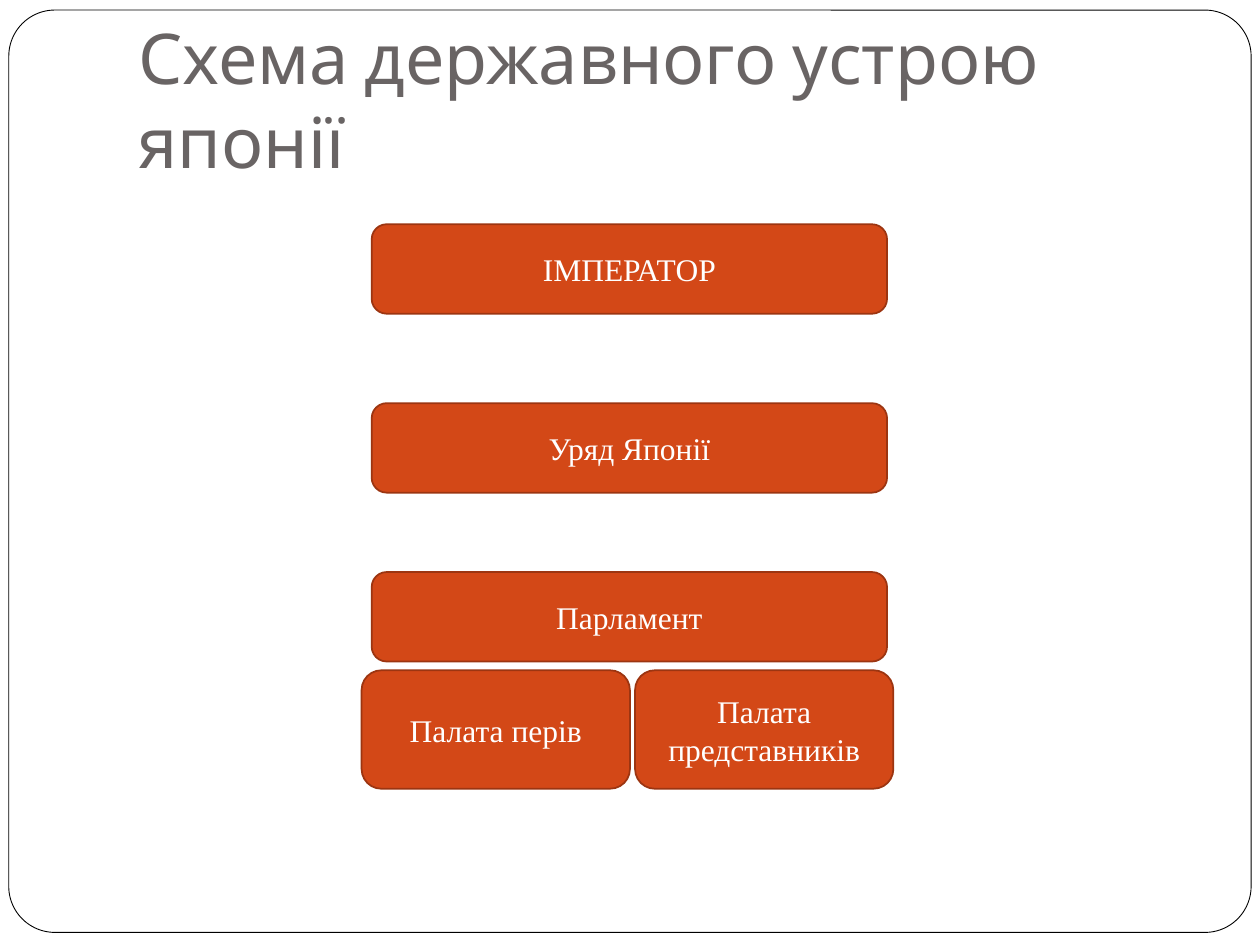
"""Build a slide with a diagram of the state system of Japan."""
import pptx
import pptx.dml.color
import pptx.enum.shapes
import pptx.enum.text
import pptx.util

Inches = pptx.util.Inches
ALIGN = pptx.enum.text.PP_ALIGN
ANCHOR = pptx.enum.text.MSO_ANCHOR


def color(value):
    return pptx.dml.color.RGBColor.from_string(value)


def add_box(slide, box, fill, line, line_width):
    shape = slide.shapes.add_shape(
        pptx.enum.shapes.MSO_SHAPE.ROUNDED_RECTANGLE, *map(Inches, box)
    )
    shape.shadow.inherit = False
    shape.fill.solid()
    shape.fill.fore_color.rgb = color(fill)
    shape.line.color.rgb = color(line)
    shape.line.width = pptx.util.Pt(line_width)
    return shape


presentation = pptx.Presentation()
presentation.slide_width = Inches(10)
presentation.slide_height = Inches(7.5)
slide = presentation.slides.add_slide(presentation.slide_layouts[5])

title = slide.shapes.title
frame = add_box(slide, (0.07, 0.08, 9.86, 7.32), "FFFFFF", "000000", 0.5)
frame.adjustments[0] = 0.05
title.element.addprevious(frame.element)

title_place = {"left": 1, "top": 0.3, "width": 8.5, "height": 1.25}
for name, value in title_place.items():
    setattr(title, name, Inches(value))
title.text = "Схема державного устрою японії"

texts = [(title, ALIGN.LEFT, ANCHOR.BOTTOM, "Cabin", 40, "696464")]
boxes = [
    ("ІМПЕРАТОР", 2.95, 1.78, 4.09, 0.71),
    ("Уряд Японії", 2.95, 3.2, 4.09, 0.71),
    ("Парламент", 2.95, 4.54, 4.09, 0.71),
    ("Палата перів", 2.87, 5.32, 2.13, 0.94),
    ("Палата представників", 5.04, 5.32, 2.05, 0.94),
]
for text, *box in boxes:
    shape = add_box(slide, box, "D34817", "9C3511", 1)
    shape.text_frame.text = text
    texts.append(
        (shape, ALIGN.CENTER, ANCHOR.MIDDLE, "Times New Roman", 18, "FFFFFF")
    )

for shape, alignment, anchor, font_name, size, font_color in texts:
    frame_format = {
        "word_wrap": True,
        "auto_size": pptx.enum.text.MSO_AUTO_SIZE.NONE,
        "vertical_anchor": anchor,
    }
    for name, value in frame_format.items():
        setattr(shape.text_frame, name, value)
    paragraph = shape.text_frame.paragraphs[0]
    paragraph.alignment = alignment
    font = paragraph.runs[0].font
    for name, value in {"name": font_name, "size": pptx.util.Pt(size)}.items():
        setattr(font, name, value)
    font.color.rgb = color(font_color)

title.text_frame.margin_bottom = Inches(0.1)

presentation.save("out.pptx")
